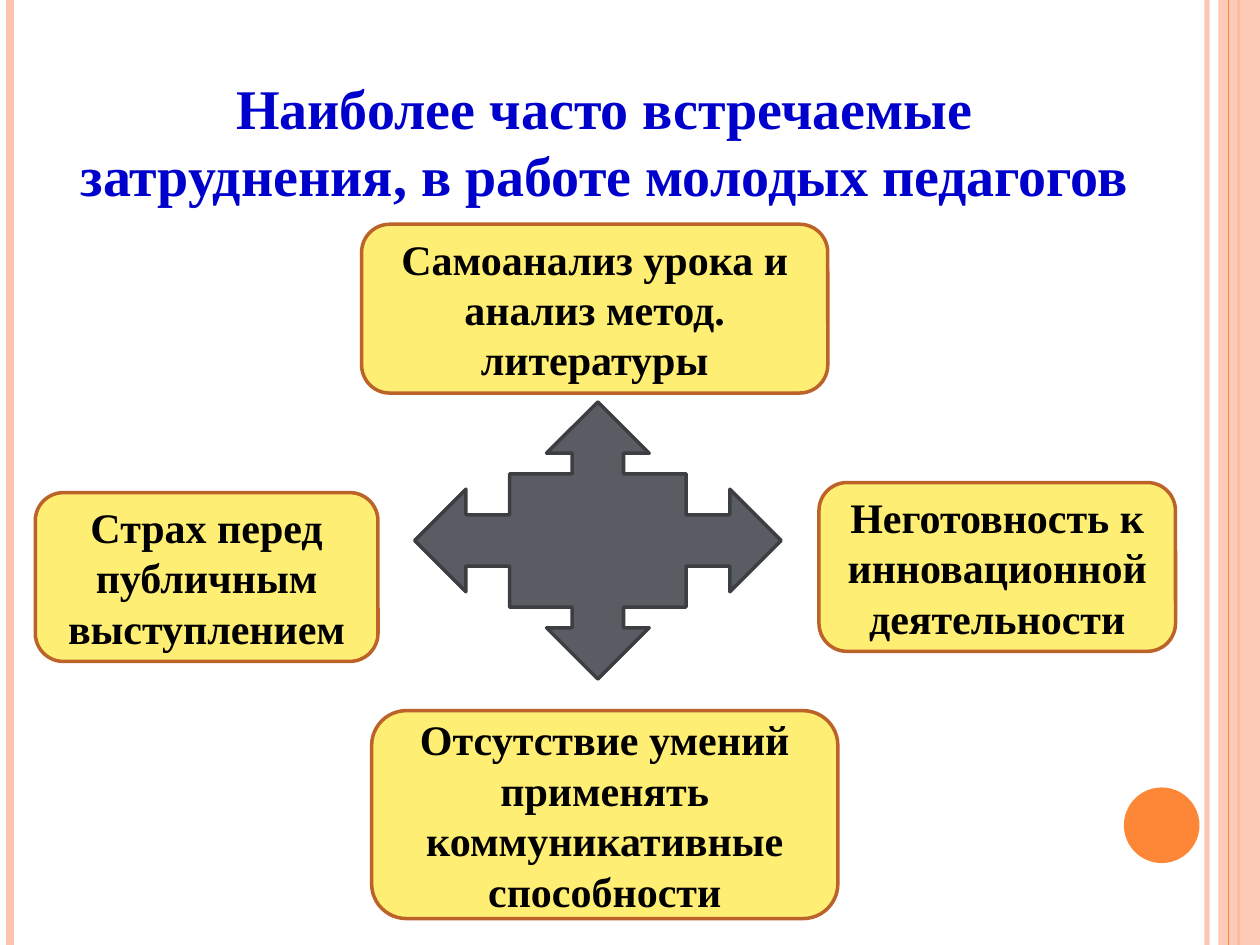
from dataclasses import dataclass

from lxml import etree
from pptx import Presentation
from pptx import util as u
from pptx.dml.color import RGBColor
from pptx.enum import shapes, text
from pptx.oxml.ns import qn


@dataclass(frozen=True)
class Theme:
    font: str = "Times New Roman"
    title_size: int = 32
    card_size: int = 24
    title: str = "0000CC"
    ink: str = "000000"
    card: str = "FFEE74"
    card_edge: str = "BC6329"
    arrow: str = "595D63"
    arrow_edge: str = "3C3E42"
    accent: str = "FE8637"
    pale: str = "FEC3AE"


def write(shape, words, *, font, size, color, anchor):
    """Put one bold, centred paragraph into a shape."""
    frame = shape.text_frame
    frame.word_wrap = True
    frame.vertical_anchor = anchor
    para = frame.paragraphs[0]
    para.alignment = text.PP_ALIGN.CENTER
    span = para.add_run()
    span.text = words
    span.font.name = font
    span.font.size = u.Pt(size)
    span.font.bold = True
    span.font.color.rgb = RGBColor.from_string(color)


def paint(fill, color, opacity=100):
    """Apply a solid colour, optionally see-through."""
    fill.solid()
    fill.fore_color.rgb = RGBColor.from_string(color)
    if opacity < 100:
        for node in fill._xPr.iter(qn("a:srgbClr")):
            etree.SubElement(node, qn("a:alpha"), val=str(opacity * 1000))


class Painter:
    def __init__(self, page, theme):
        self.page = page
        self.theme = theme

    def shape(self, kind, area, fill, edge=None, opacity=100):
        shape = self.page.shapes.add_shape(kind, *map(u.Inches, area))
        shape.shadow.inherit = False
        paint(shape.fill, fill, opacity)
        if edge:
            paint(shape.line.fill, edge)
            shape.line.width = u.Pt(2)
        else:
            shape.line.fill.background()
        return shape

    def stripe(self, x, color, width, opacity=100):
        """Draw a vertical line over the full page height."""
        line = self.page.shapes.add_connector(
            shapes.MSO_CONNECTOR.STRAIGHT,
            u.Inches(x), 0, u.Inches(x), u.Inches(7.5))
        line.line.width = u.Pt(width)
        paint(line.line.fill, color, opacity)
        etree.SubElement(line._element.spPr, qn("a:effectLst"))

    def card(self, words, area):
        t = self.theme
        box = self.shape(shapes.MSO_SHAPE.ROUNDED_RECTANGLE, area, t.card, t.card_edge)
        write(box, words, font=t.font, size=t.card_size, color=t.ink,
              anchor=text.MSO_ANCHOR.MIDDLE)

    def title(self, words, area):
        t = self.theme
        box = self.page.shapes.add_textbox(*map(u.Inches, area))
        write(box, words, font=t.font, size=t.title_size, color=t.title,
              anchor=text.MSO_ANCHOR.BOTTOM)


def main():
    deck = Presentation()
    deck.slide_width, deck.slide_height = u.Inches(10), u.Inches(7.5)
    theme = Theme()
    painter = Painter(deck.slides.add_slide(deck.slide_layouts[6]), theme)

    # Side stripes and accent circle
    painter.stripe(9.58, theme.pale, 3, opacity=93)
    painter.stripe(0.08, theme.pale, 4.5)
    painter.stripe(9.83, theme.accent, 1.5)
    painter.shape(shapes.MSO_SHAPE.RECTANGLE, (9.67, 0, 0.33, 7.5),
                  theme.pale, opacity=87)
    painter.stripe(9.75, theme.accent, 0.75)
    painter.shape(shapes.MSO_SHAPE.OVAL, (8.92, 6.25, 0.6, 0.6), theme.accent)

    # Four-way arrow with a difficulty on each side
    painter.shape(shapes.MSO_SHAPE.QUAD_ARROW_CALLOUT, (3.29, 3.19, 2.91, 2.2),
                  theme.arrow, theme.arrow_edge)
    difficulties = [
        ("Самоанализ урока и анализ метод. литературы", (2.87, 1.78, 3.7, 1.34)),
        ("Неготовность к инновационной деятельности", (6.5, 3.83, 2.83, 1.34)),
        ("Отсутствие умений применять коммуникативные способности",
         (2.95, 5.64, 3.7, 1.65)),
        ("Страх перед публичным выступлением", (0.28, 3.91, 2.72, 1.34)),
    ]
    for words, area in difficulties:
        painter.card(words, area)

    # Heading
    painter.title("Наиболее часто встречаемые затруднения, в работе молодых педагогов",
                  (0.43, 0.36, 8.74, 1.34))

    deck.save("out.pptx")


if __name__ == "__main__":
    main()
